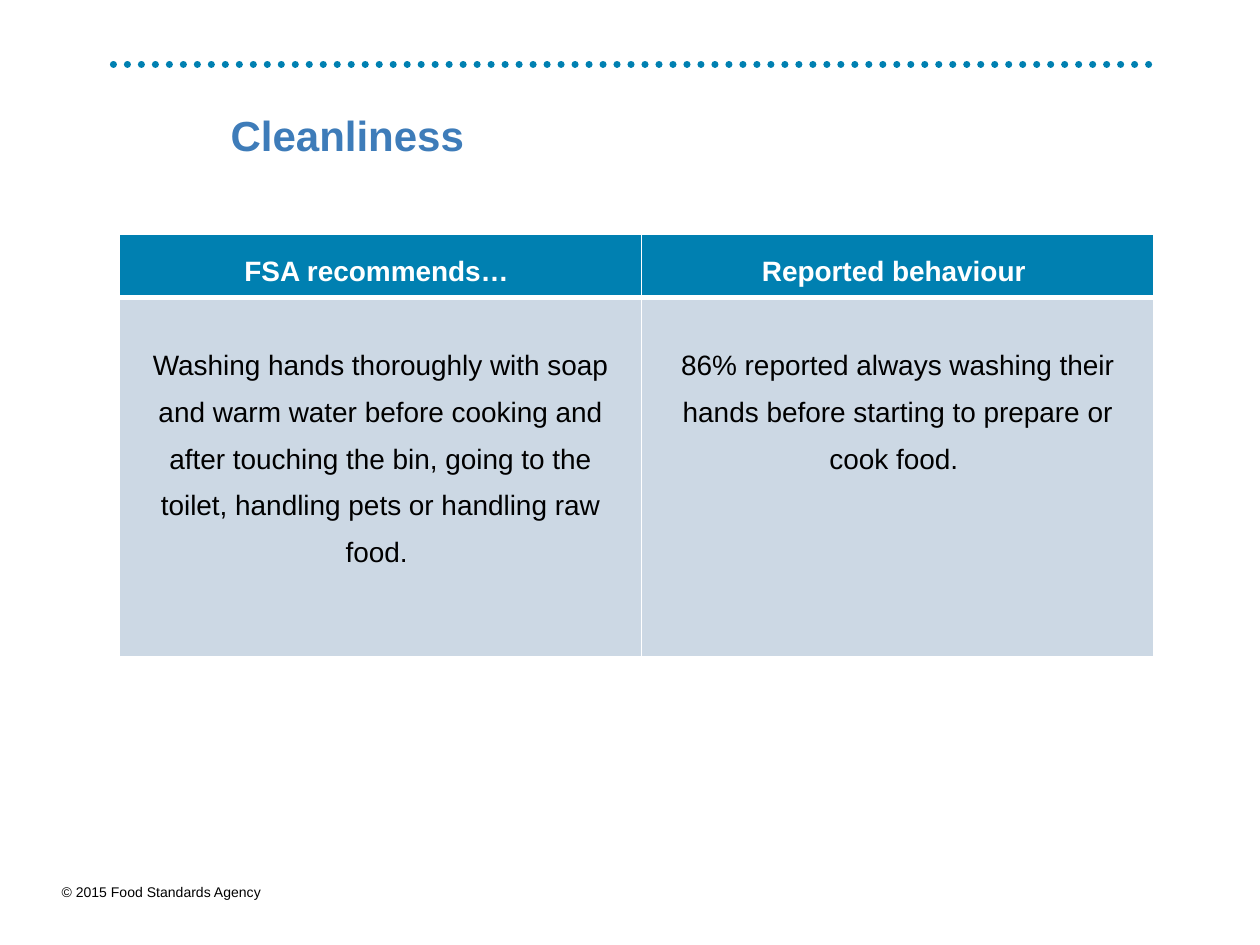
import pptx
import pptx.util
import pptx.dml.color
import pptx.enum.dml
import pptx.enum.shapes
import pptx.enum.text
import pptx.oxml
import pptx.oxml.ns
from pptx.util import Inches

RGBColor = pptx.dml.color.RGBColor
TEAL = RGBColor(0x00, 0x80, 0xB1)
TITLE_BLUE = RGBColor(0x3E, 0x7C, 0xB9)
PALE_BLUE = RGBColor(0xCC, 0xD8, 0xE4)
WHITE = RGBColor(0xFF, 0xFF, 0xFF)
BLACK = RGBColor(0x00, 0x00, 0x00)
CENTER = pptx.enum.text.PP_ALIGN.CENTER
MIDDLE = pptx.enum.text.MSO_ANCHOR.MIDDLE

HEADINGS = ["FSA recommends… ", "Reported behaviour "]
FINDINGS = [
    "Washing hands thoroughly with soap and warm water before cooking and after "
    "touching the bin, going to the toilet, handling pets or handling raw food. ",
    "86% reported always washing their hands before starting to prepare or cook food. ",
]


def style_paragraph(p, size, color, bold=False):
    for r in p.runs:
        r.font.name = "Arial"
        r.font.size = pptx.util.Pt(size)
        r.font.bold = bold
        r.font.color.rgb = color


def add_dotted_rule(slide, left, right, y):
    rule = slide.shapes.add_connector(
        pptx.enum.shapes.MSO_CONNECTOR.STRAIGHT,
        Inches(left), Inches(y), Inches(right), Inches(y))
    rule.line.color.rgb = TEAL
    rule.line.width = pptx.util.Pt(4)
    rule.line.dash_style = pptx.enum.dml.MSO_LINE.ROUND_DOT
    rule.line._get_or_add_ln().set("cap", "rnd")
    pptx.oxml.ns.qn("a:effectLst")
    rule._element.spPr.append(pptx.oxml.parse_xml(
        f"<a:effectLst {pptx.oxml.ns.nsdecls('a')}/>"))


def add_text(slide, text, box, size, color, bold=False, wrap=True):
    s = slide.shapes.add_textbox(*map(Inches, box))
    tf = s.text_frame
    tf.word_wrap = wrap
    tf.text = text
    style_paragraph(tf.paragraphs[0], size, color, bold)
    return tf


def add_title(slide, text):
    tf = add_text(slide, text, (1.83, 0.57, 7.29, 1.05), 24, TITLE_BLUE, bold=True)
    tf.margin_left = tf.margin_right = tf.margin_top = tf.margin_bottom = 0
    tf.vertical_anchor = MIDDLE
    tf.paragraphs[0].line_spacing = 0.9


def set_borders(cell, **widths):
    """Draw white cell borders; widths in points are keyed by side: L, R, T, B."""
    tcPr = cell._tc.get_or_add_tcPr()
    for i, (side, width) in enumerate(widths.items()):
        tcPr.insert(i, pptx.oxml.parse_xml(
            f"<a:ln{side} {pptx.oxml.ns.nsdecls('a')} w='{pptx.util.Pt(width)}'>"
            f"<a:solidFill><a:srgbClr val='{WHITE}'/></a:solidFill></a:ln{side}>"))


def fill_row(table, row, texts, fill, color, bold, top_margin, top, bottom):
    for col, text in enumerate(texts):
        cell = table.cell(row, col)
        cell.fill.solid()
        cell.fill.fore_color.rgb = fill
        cell.margin_top = Inches(top_margin)
        cell.text_frame.text = text
        p = cell.text_frame.paragraphs[0]
        p.alignment = CENTER
        p.line_spacing = 1.5
        style_paragraph(p, 16, color, bold)
        set_borders(cell, L=1, R=1, T=top, B=bottom)


def add_findings_table(slide):
    frame = slide.shapes.add_table(
        2, 2, Inches(0.95), Inches(1.86), Inches(8.21), Inches(3.32))
    table = frame.table
    for column, width in zip(table.columns, (4.14, 4.07)):
        column.width = Inches(width)
    for row, height in zip(table.rows, (0.47, 2.85)):
        row.height = Inches(height)
    fill_row(table, 0, HEADINGS, TEAL, WHITE, True, 0.05, top=1, bottom=3)
    fill_row(table, 1, FINDINGS, PALE_BLUE, BLACK, False, 0.3, top=3, bottom=1)


def main():
    prs = pptx.Presentation()
    prs.slide_width, prs.slide_height = Inches(10), Inches(7.5)
    slide = prs.slides.add_slide(prs.slide_layouts[6])
    add_dotted_rule(slide, 0.9, 9.13, 0.51)
    add_text(slide, "© 2015 Food Standards Agency", (0.39, 6.96, 1.81, 0.24),
             8, BLACK, wrap=False)
    add_title(slide, "Cleanliness")
    add_findings_table(slide)
    prs.save("out.pptx")


if __name__ == "__main__":
    main()
